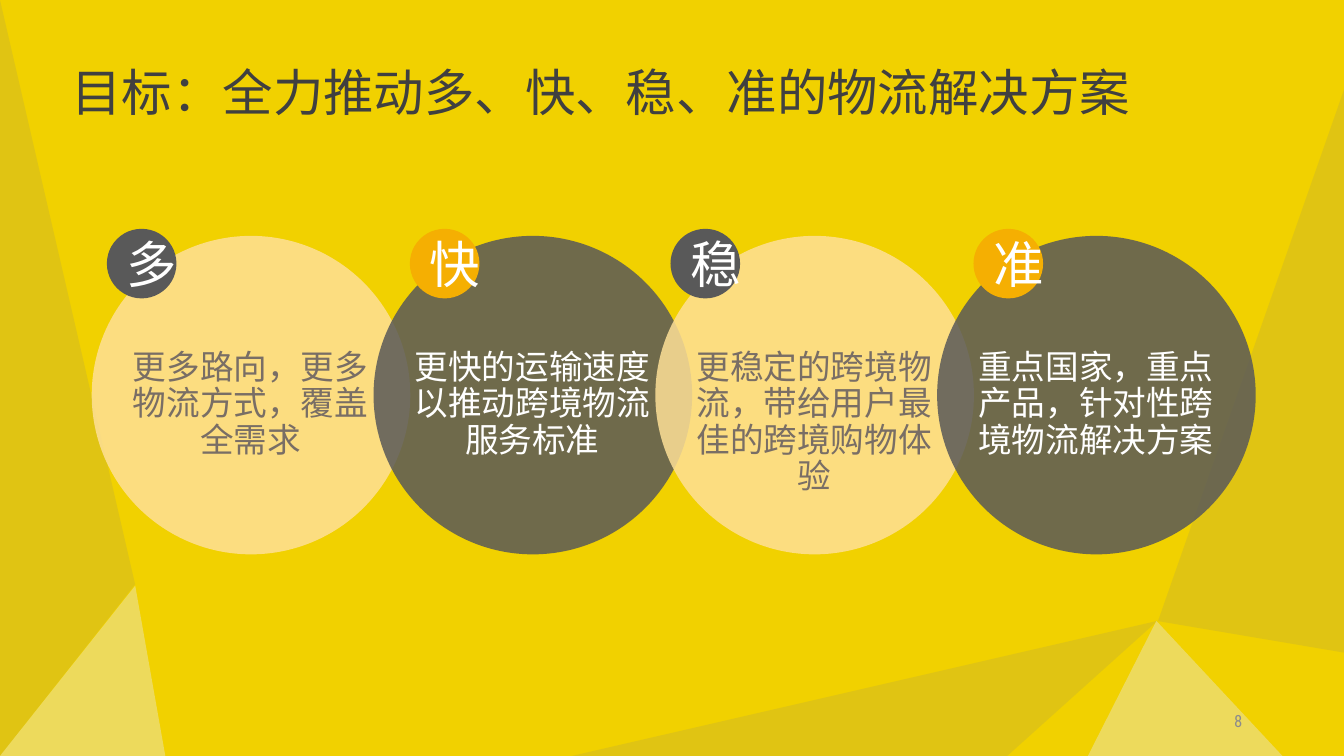
"""Build the slide on the four goals of the logistics solution."""
from dataclasses import dataclass

from lxml import etree
from pptx import Presentation
from pptx import util as u
from pptx.dml.color import RGBColor
from pptx.enum import shapes, text
from pptx.oxml import ns

CJK_FONT = "Noto Sans CJK SC"
CREAM, CHARCOAL, ORANGE, WHITE, BROWN = "FEE097", "595959", "F5AF02", "FFFFFF", "796E65"
GREY, PALE = "808080", "E9E9E8"
CIRCLE_SIZE, CIRCLE_TOP, CIRCLE_LEFT, CIRCLE_STEP = 3.16, 2.34, 0.91, 2.795
BADGE_SIZE, BADGE_TOP = 0.69, 2.27


@dataclass
class Facet:
    left: float
    top: float
    width: float
    height: float
    apex: float
    color: str
    opacity: int
    rotation: int = 0


@dataclass
class Theme:
    circle: str
    badge: str
    text: str
    badge_offset: float


@dataclass
class Goal:
    word: str
    detail: str


FACETS_BEHIND = [
    Facet(-3.08, 3.08, 7.5, 1.34, 0.773, GREY, 15, 90),
    Facet(0, 5.81, 1.64, 1.69, 0.818, PALE, 40),
]
FACETS_RIGHT = [
    Facet(10.79, 6.16, 1.93, 1.34, 0.352, PALE, 40),
    Facet(9.61, 2.75, 5.6, 1.85, 0.056, GREY, 15, 270),
]
FLOOR_FACET = [(5.67, 7.5), (11.48, 6.16), (9.99, 7.5)]
THEMES = [
    Theme(CREAM, CHARCOAL, BROWN, 0.15),
    Theme(CHARCOAL, ORANGE, WHITE, 0.36),
]
GOALS = [
    Goal("多", "更多路向，更多物流方式，覆盖全需求"),
    Goal("快", "更快的运输速度以推动跨境物流服务标准"),
    Goal("稳", "更稳定的跨境物流，带给用户最佳的跨境购物体验"),
    Goal("准", "重点国家，重点产品，针对性跨境物流解决方案"),
]


def rgb(color: str) -> RGBColor:
    return RGBColor.from_string(color)


def paint(shape, color: str, opacity: int = 100) -> None:
    shape.shadow.inherit = False
    shape.fill.solid()
    shape.fill.fore_color.rgb = rgb(color)
    shape.line.fill.background()
    if opacity < 100:
        fill_color = shape.element.spPr.find(".//" + ns.qn("a:srgbClr"))
        etree.SubElement(fill_color, ns.qn("a:alpha"), val=str(opacity * 1000))


def add_preset(slide, kind, left: float, top: float, width: float, height: float,
               color: str, opacity: int = 100):
    shape = slide.shapes.add_shape(kind, u.Inches(left), u.Inches(top),
                                   u.Inches(width), u.Inches(height))
    paint(shape, color, opacity)
    return shape


def add_facet(slide, facet: Facet) -> None:
    shape = add_preset(slide, shapes.MSO_SHAPE.ISOSCELES_TRIANGLE, facet.left, facet.top,
                       facet.width, facet.height, facet.color, facet.opacity)
    shape.adjustments[0] = facet.apex
    shape.rotation = facet.rotation


def add_floor_facet(slide) -> None:
    start, *rest = [(u.Inches(x), u.Inches(y)) for x, y in FLOOR_FACET]
    builder = slide.shapes.build_freeform(*start)
    builder.add_line_segments(rest, close=True)
    paint(builder.convert_to_shape(), GREY, 15)


def write(shape, words: str, *, size: float, color: str, font: str = CJK_FONT,
          align=text.PP_ALIGN.LEFT, anchor=text.MSO_ANCHOR.TOP,
          line_points: float | None = None) -> None:
    frame = shape.text_frame
    frame.word_wrap = True
    frame.vertical_anchor = anchor
    paragraph = frame.paragraphs[0]
    paragraph.alignment = align
    if line_points:
        paragraph.line_spacing = u.Pt(line_points)
    run = paragraph.add_run()
    run.text = words
    run.font.size = u.Pt(size)
    run.font.name = font
    run.font.color.rgb = rgb(color)
    etree.SubElement(run.font._element, ns.qn("a:ea"), typeface=font)


def add_text(slide, words: str, left: float, top: float, width: float, height: float,
             **text_format) -> None:
    box = slide.shapes.add_textbox(u.Inches(left), u.Inches(top),
                                   u.Inches(width), u.Inches(height))
    write(box, words, **text_format)


def add_goals(slide) -> None:
    oval, center = shapes.MSO_SHAPE.OVAL, text.PP_ALIGN.CENTER
    placed = [(CIRCLE_LEFT + i * CIRCLE_STEP, THEMES[i % 2], goal)
              for i, goal in enumerate(GOALS)]
    for left, theme, _ in placed:
        add_preset(slide, oval, left, CIRCLE_TOP, CIRCLE_SIZE, CIRCLE_SIZE, theme.circle, 85)
    for left, theme, goal in placed:
        badge = add_preset(slide, oval, left + theme.badge_offset, BADGE_TOP,
                           BADGE_SIZE, BADGE_SIZE, theme.badge)
        write(badge, goal.word, size=36, color=WHITE, align=center,
              anchor=text.MSO_ANCHOR.MIDDLE)
    for left, theme, goal in placed:
        add_text(slide, goal.detail, left + 0.26, 3.42, 2.63, 1.09, size=24,
                 color=theme.text, align=center, line_points=26)


def main() -> None:
    presentation = Presentation()
    presentation.slide_width = u.Inches(13.33)
    presentation.slide_height = u.Inches(7.5)
    slide = presentation.slides.add_slide(presentation.slide_layouts[6])
    slide.background.fill.solid()
    slide.background.fill.fore_color.rgb = rgb("F1D100")

    add_text(slide, "目标：全力推动多、快、稳、准的物流解决方案", 0.61, 0.52, 11.8, 0.71,
             size=36, color="404040", line_points=46)
    for facet in FACETS_BEHIND:
        add_facet(slide, facet)
    add_floor_facet(slide)
    for facet in FACETS_RIGHT:
        add_facet(slide, facet)
    add_text(slide, "8", 9.42, 6.95, 3, 0.4, size=12, color="8C8C8C",
             font="Roboto Condensed", align=text.PP_ALIGN.RIGHT,
             anchor=text.MSO_ANCHOR.MIDDLE)
    add_goals(slide)
    presentation.save("out.pptx")


if __name__ == "__main__":
    main()
